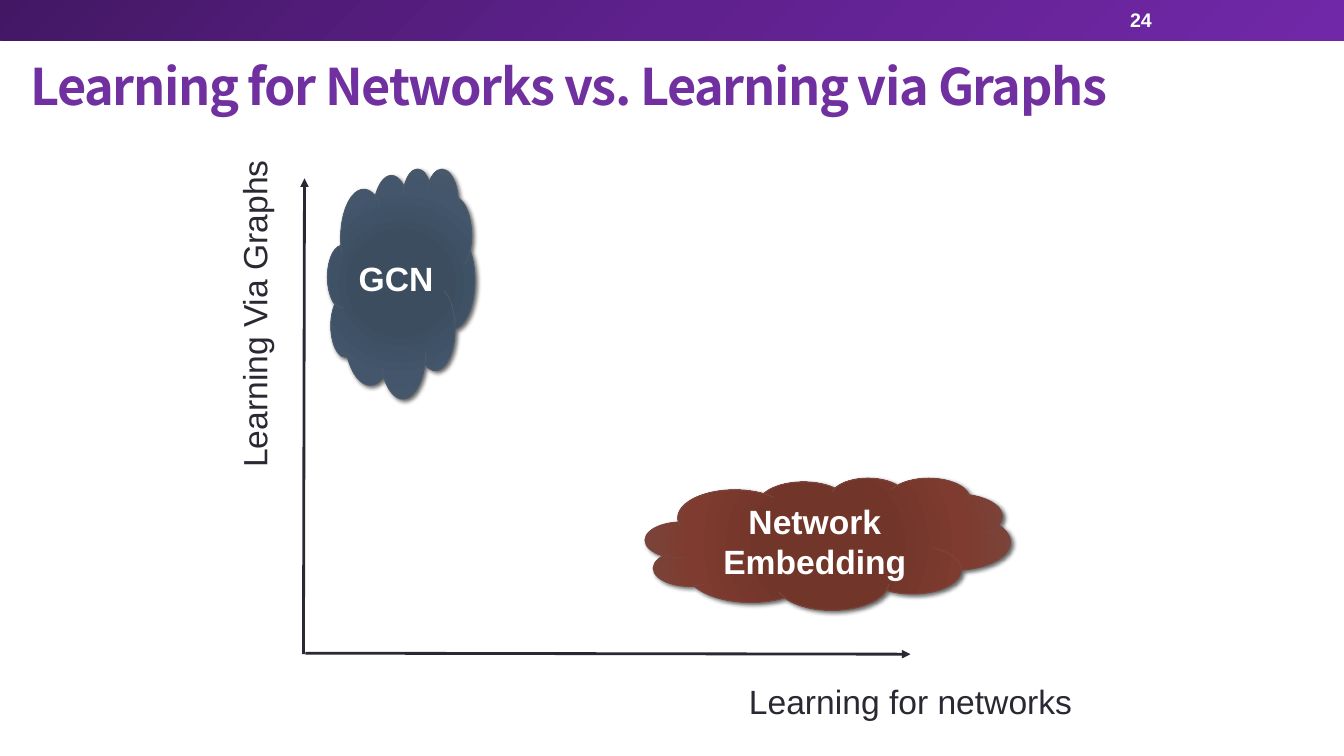
from lxml.etree import SubElement
from pptx import Presentation
from pptx.dml.color import RGBColor
from pptx.enum.shapes import MSO_CONNECTOR, MSO_SHAPE
from pptx.enum.text import MSO_ANCHOR, MSO_AUTO_SIZE, PP_ALIGN
from pptx.oxml import parse_xml
from pptx.oxml.ns import nsdecls, qn
from pptx.util import Inches, Pt

COLORS = {"title": "7030A0", "ink": "292934", "white": "FFFFFF",
          "red": "79463D", "blue": "4C5A6A", "shade": "000000"}
BAND = [(0, "431764"), (50, "5F218E"), (100, "7128A8")]
RED = [(0, "743327"), (34, "72352A"), (70, "7F3B2F"), (100, COLORS["red"])]
BLUE = [(0, "3B4D61"), (34, "3C4D60"), (70, "43566B"), (100, COLORS["blue"])]
LINEAR = '<a:lin ang="2700000" scaled="0"/>'
RADIAL = ('<a:path path="circle"><a:fillToRect l="50000" t="50000" '
          'r="50000" b="50000"/></a:path>')


def rgb(name):
    """Return the named colour."""
    return RGBColor.from_string(COLORS[name])


def style(para, size, color, bold=False, face="Arial"):
    """Set the font of a paragraph."""
    font = para.font
    font.name, font.size, font.bold = face, Pt(size), bold
    font.color.rgb = rgb(color)


def shade(shape, stops, way):
    """Fill a shape with a gradient."""
    marks = "".join(f'<a:gs pos="{pos * 1000}"><a:srgbClr val="{tone}"/></a:gs>'
                    for pos, tone in stops)
    fill = parse_xml(f'<a:gradFill {nsdecls("a")} rotWithShape="1">'
                     f'<a:gsLst>{marks}</a:gsLst>{way}</a:gradFill>')
    shape.element.spPr.insert(2, fill)


def header(slide, box, number):
    """Draw the top band and its slide number."""
    x, y, w, h = box
    band = slide.shapes.add_shape(MSO_SHAPE.RECTANGLE, *map(Inches, box))
    band.shadow.inherit = False
    band.line.fill.background()
    shade(band, BAND, LINEAR)
    note = slide.shapes.add_textbox(Inches(x + 11.11), Inches(y + 0.02),
                                    Inches(1.56), Inches(h - 0.04))
    frame = note.text_frame
    frame.word_wrap = True
    frame.vertical_anchor = MSO_ANCHOR.MIDDLE
    frame.text = number
    style(frame.paragraphs[0], 14, "white", True)


def heading(slide, box, text):
    """Place and format the title."""
    title = slide.shapes.title
    title.left, title.top, title.width, title.height = map(Inches, box)
    frame = title.text_frame
    frame.text = text
    frame.vertical_anchor = MSO_ANCHOR.MIDDLE
    para = frame.paragraphs[0]
    para.alignment, para.line_spacing = PP_ALIGN.LEFT, 0.9
    style(para, 36, "title", True, "Noto Sans CJK SC")
    para.runs[0].font._element.set("spc", "-100")


def arrow(slide, start, end):
    """Draw an axis with an arrowhead at its end."""
    line = slide.shapes.add_connector(MSO_CONNECTOR.STRAIGHT,
                                      *map(Inches, start + end))
    line.line.color.rgb = rgb("ink")
    line.line.width = Pt(2)
    SubElement(line.line._get_or_add_ln(), qn("a:tailEnd"), type="triangle")
    SubElement(line.element.spPr, qn("a:effectLst"))


def label(slide, box, text, upright=False):
    """Write an axis label, upright for the vertical axis."""
    note = slide.shapes.add_textbox(*map(Inches, box))
    frame = note.text_frame
    frame.word_wrap = False
    frame.auto_size = MSO_AUTO_SIZE.SHAPE_TO_FIT_TEXT
    frame.text = text
    style(frame.paragraphs[0], 24, "ink")
    if upright:
        note.rotation = 180
        frame._txBody.bodyPr.set("vert", "eaVert")


def cloud(slide, box, text, stops, edge):
    """Draw a shaded cloud with a bold caption."""
    shape = slide.shapes.add_shape(MSO_SHAPE.CLOUD, *map(Inches, box))
    shade(shape, stops, RADIAL)
    shape.line.color.rgb = rgb(edge)
    shape.line.width = Pt(0.75)
    shape.shadow.inherit = False
    cast = SubElement(shape.element.spPr.find(qn("a:effectLst")),
                      qn("a:outerShdw"), blurRad=str(Pt(3)), dist=str(Pt(2)),
                      dir="2700000", algn="tl", rotWithShape="0")
    tone = SubElement(cast, qn("a:srgbClr"), val=COLORS["shade"])
    SubElement(tone, qn("a:alpha"), val="60000")
    frame = shape.text_frame
    frame.word_wrap = True
    frame.vertical_anchor = MSO_ANCHOR.MIDDLE
    frame.text = text
    para = frame.paragraphs[0]
    para.alignment = PP_ALIGN.CENTER
    style(para, 24, "white", True)


def plot(slide, box):
    """Draw the two axes, their labels and the clouds."""
    x, y, w, h = box
    base = y + h
    arrow(slide, (x + 0.02, base - 0.01), (x + w, base))
    arrow(slide, (x, base), (x + 0.01, y))
    label(slide, (x + 4.32, base + 0.22, 3.44, 0.5), "Learning for networks")
    label(slide, (x - 0.74, y - 0.22, 0.61, 3.19), "Learning Via Graphs", True)
    cloud(slide, (x + 3.39, y + 2.97, 3.62, 1.31), "Network Embedding", RED, "red")
    cloud(slide, (x + 0.24, y - 0.1, 1.46, 2.28), "GCN", BLUE, "blue")


def main():
    """Build and save the slide."""
    deck = Presentation()
    deck.slide_width, deck.slide_height = Inches(13.33), Inches(7.5)
    slide = deck.slides.add_slide(deck.slide_layouts[5])
    header(slide, (0, 0, 13.33, 0.4), "24")
    heading(slide, (0.2, 0.35, 12, 1.08),
            "Learning for Networks vs. Learning via Graphs")
    plot(slide, (3.01, 1.77, 6.02, 4.72))
    deck.save("out.pptx")


if __name__ == "__main__":
    main()
